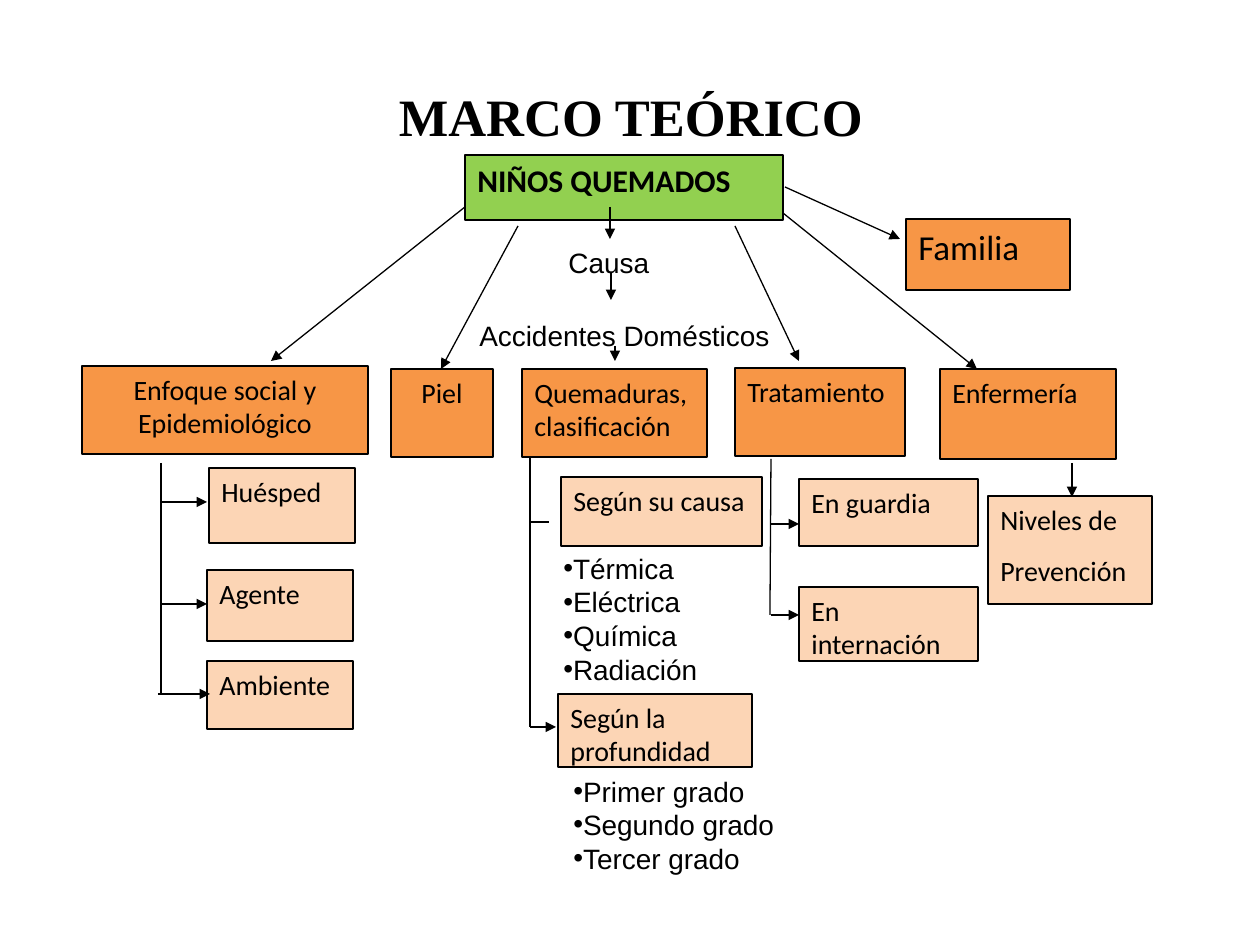
from pptx import Presentation
from pptx.dml.color import RGBColor
from pptx.enum.shapes import MSO_CONNECTOR, MSO_SHAPE
from pptx.enum.text import MSO_ANCHOR as ANCHOR, MSO_AUTO_SIZE as AUTO, PP_ALIGN as ALIGN
from pptx.oxml.ns import qn
from pptx.util import Emu, Pt
from lxml.etree import SubElement

PX = 914400 // 126
BLACK, GREEN, ORANGE, PEACH = "000000", "92D050", "F79646", "FCD5B5"
LEFT, CENTER, RIGHT = ALIGN.LEFT, ALIGN.CENTER, ALIGN.RIGHT
TOP, MIDDLE = ANCHOR.TOP, ANCHOR.MIDDLE

TITLE = ("MARCO TEÓRICO", (64, 37, 1134, 158))

# paragraphs, (left, top, width, height), fill, alignment, size, bold
MAIN_BOXES = [
    (["NIÑOS QUEMADOS"], (465, 155, 318, 65), GREEN, LEFT, 18, True),
    (["Familia"], (906, 219, 164, 71), ORANGE, LEFT, 20, False),
]
BRANCHES = [
    ("Enfoque social y Epidemiológico", (82, 366, 286, 88), CENTER),
    ("Piel", (391, 369, 102, 88), CENTER),
    ("Quemaduras, clasificación", (522, 369, 185, 88), LEFT),
    ("Tratamiento", (735, 368, 170, 88), LEFT),
    ("Enfermería", (940, 369, 176, 90), LEFT),
]
DETAILS = [
    (["Huésped"], (209, 468, 146, 75)),
    (["Agente"], (207, 570, 146, 71)),
    (["Ambiente"], (207, 661, 146, 68)),
    (["Según su causa"], (561, 477, 201, 69)),
    (["Según la profundidad"], (558, 694, 194, 73)),
    (["En guardia"], (799, 479, 179, 67)),
    (["En internación"], (799, 587, 179, 74)),
    (["Niveles de", "Prevención"], (988, 496, 164, 108)),
]

# paragraphs, place, alignment, anchor, bulleted
LABELS = [
    (["Causa"], (556, 239, 109, 47), LEFT, TOP, False),
    (["Accidentes Domésticos"], (352, 312, 430, 47), RIGHT, MIDDLE, False),
    (["Térmica", "Eléctrica", "Química", "Radiación"],
     (551, 544, 198, 149), LEFT, MIDDLE, True),
    (["Primer grado", "Segundo grado", "Tercer grado"],
     (561, 767, 289, 115), LEFT, MIDDLE, True),
]

# x and y of the start, x and y of the end
ARROWS = [
    (610, 207, 610, 239), (611, 272, 611, 300), (615, 346, 615, 361),
    (465, 207, 271, 361), (518, 226, 441, 369), (735, 226, 799, 361),
    (785, 187, 900, 239), (783, 213, 977, 369),
    (161, 502, 207, 502), (161, 604, 207, 604), (158, 694, 210, 694),
    (771, 524, 799, 524), (771, 615, 799, 615),
    (530, 727, 556, 727), (1072, 463, 1072, 497),
]
STEMS = [
    (161, 463, 161, 695), (771, 459, 770, 615),
    (530, 457, 530, 522), (530, 522, 530, 727), (549, 522, 530, 522),
]


def px(values):
    return [Emu(value * PX) for value in values]


def color(code):
    return RGBColor.from_string(code)


def write(frame, paragraphs, font, size, align=LEFT, bold=False, anchor=TOP,
          space_after=0, bulleted=False):
    frame.word_wrap = True
    frame.vertical_anchor = anchor
    for number, text in enumerate(paragraphs):
        paragraph = frame.add_paragraph() if number else frame.paragraphs[0]
        paragraph.alignment = align
        paragraph.space_after = Pt(space_after)
        run = paragraph.add_run()
        run.text = text
        run.font.color.rgb = color(BLACK)
        style = {"name": font, "size": Pt(size), "bold": bold}
        for key, value in style.items():
            setattr(run.font, key, value)
        if bulleted:
            properties = paragraph._p.get_or_add_pPr()
            SubElement(properties, qn("a:buFont"), typeface=font)
            SubElement(properties, qn("a:buChar"), char="•")


def add_box(slide, paragraphs, place, fill, align=LEFT, size=16, bold=False):
    box = slide.shapes.add_shape(MSO_SHAPE.RECTANGLE, *px(place))
    box.shadow.inherit = False
    box.fill.solid()
    box.fill.fore_color.rgb = color(fill)
    box.line.color.rgb = color(BLACK)
    box.line.width = Pt(0.75)
    write(box.text_frame, paragraphs, "Calibri", size, align, bold, space_after=10)


def add_line(slide, ends, arrow=False):
    line = slide.shapes.add_connector(MSO_CONNECTOR.STRAIGHT, *px(ends))
    line.line.color.rgb = color(BLACK)
    line.line.width = Pt(0.75)
    if arrow:
        SubElement(line.line._get_or_add_ln(), qn("a:tailEnd"), type="triangle")
    SubElement(line._element.spPr, qn("a:effectLst"))


def main():
    deck = Presentation()
    deck.slide_width, deck.slide_height = px((1260, 945))
    slide = deck.slides.add_slide(deck.slide_layouts[5])

    heading, place = TITLE
    title = slide.shapes.title
    title.left, title.top, title.width, title.height = px(place)
    write(title.text_frame, [heading], "Times New Roman", 30, CENTER, True, MIDDLE)

    for box in MAIN_BOXES:
        add_box(slide, *box)
    for text, place, align in BRANCHES:
        add_box(slide, [text], place, ORANGE, align)
    for paragraphs, place in DETAILS:
        add_box(slide, paragraphs, place, PEACH)
    for ends in STEMS:
        add_line(slide, ends)
    for ends in ARROWS:
        add_line(slide, ends, arrow=True)
    for paragraphs, place, align, anchor, bulleted in LABELS:
        label = slide.shapes.add_textbox(*px(place))
        write(label.text_frame, paragraphs, "Arial", 16, align,
              anchor=anchor, bulleted=bulleted)
        label.text_frame.auto_size = AUTO.SHAPE_TO_FIT_TEXT

    deck.save("out.pptx")


if __name__ == "__main__":
    main()
